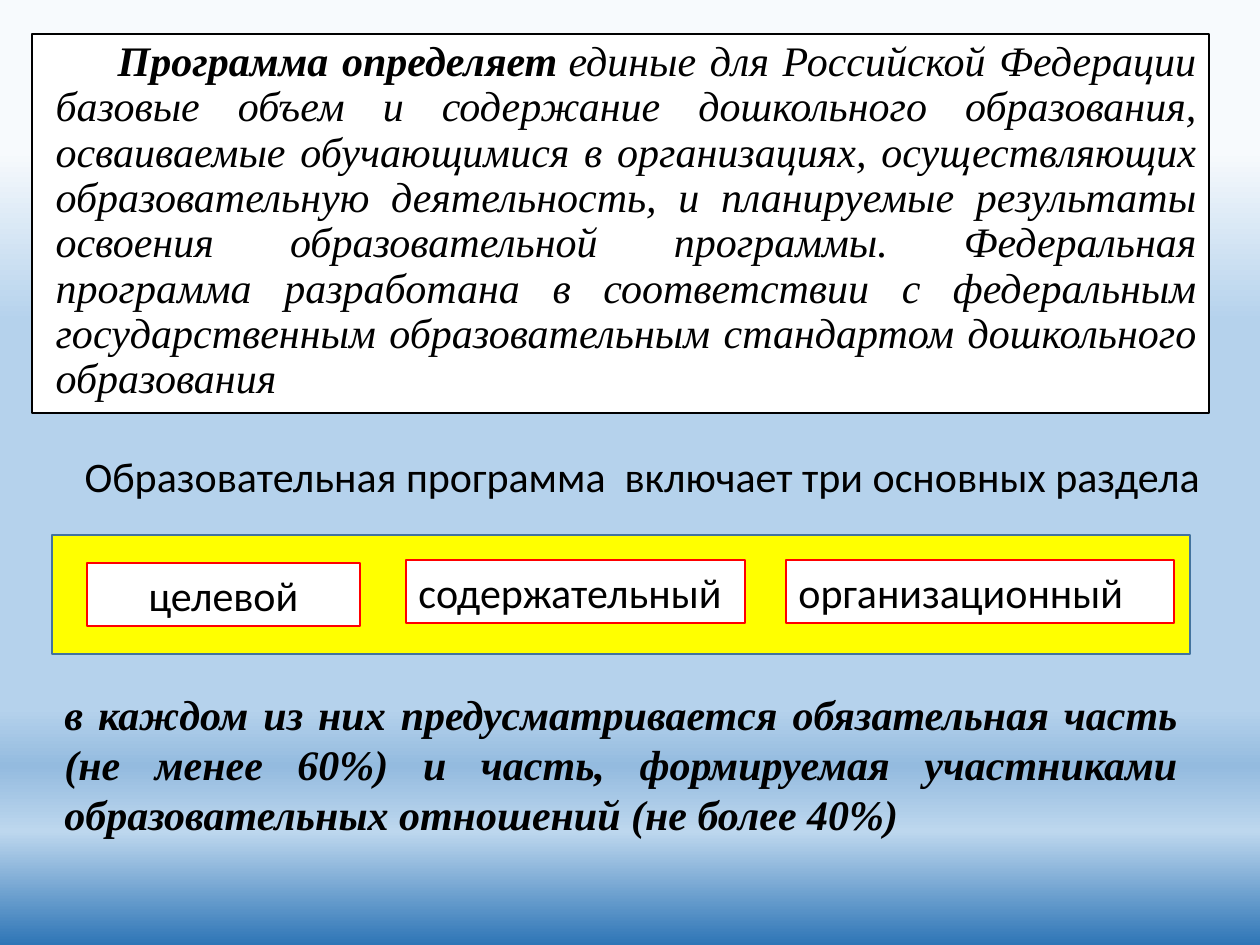
from lxml import etree
from pptx import Presentation
from pptx.dml.color import RGBColor
from pptx.enum.shapes import MSO_SHAPE
from pptx.enum.text import MSO_ANCHOR, MSO_AUTO_SIZE, PP_ALIGN
from pptx.oxml.ns import qn
from pptx.util import Pt

PX = 914400 / 126  # EMU per px
RECT = MSO_SHAPE.RECTANGLE
TOP, MIDDLE = MSO_ANCHOR.TOP, MSO_ANCHOR.MIDDLE
LEFT, CENTER, JUSTIFY = PP_ALIGN.LEFT, PP_ALIGN.CENTER, PP_ALIGN.JUSTIFY
NO_AUTOFIT = MSO_AUTO_SIZE.NONE
SANS, SERIF = "Calibri", "Times New Roman"
COLORS = {"text": "000000", "paper": "FFFFFF", "band": "FFFF00",
          "band_line": "43739E", "section_line": "FF0000"}
SKY_STOPS = [(16, "F7FAFD"), (34, "B5D2EC"), (75, "B5D2EC"),
             (81, "94BBDF"), (88, "BDD7EE"), (100, "2E75B6")]

SUBJECT = "Программа определяет"
DEFINITION = (
    "единые для Российской Федерации базовые объем и содержание дошкольного "
    "образования, осваиваемые обучающимися в организациях, осуществляющих "
    "образовательную деятельность, и планируемые результаты освоения "
    "образовательной программы. Федеральная программа разработана в "
    "соответствии с федеральным государственным образовательным стандартом "
    "дошкольного образования")
HEADING = "Образовательная программа  включает три основных раздела"
SHARES = (
    "в каждом из них предусматривается обязательная часть (не менее 60%) и "
    "часть, формируемая участниками образовательных отношений (не более 40%)")
SECTIONS = [("целевой", (87, 563, 273, 63), CENTER),
            ("содержательный", (406, 560, 339, 63), LEFT),
            ("организационный", (786, 560, 388, 63), LEFT)]


def px(*lengths):
    return [round(length * PX) for length in lengths]


def color(name):
    return RGBColor.from_string(COLORS[name])


def place(shape, box):
    shape.left, shape.top, shape.width, shape.height = px(*box)


def paint(shape, fill, line):
    shape.fill.solid()
    shape.fill.fore_color.rgb = color(fill)
    shape.line.color.rgb = color(line)
    shape.line.width = Pt(1)


def add_run(paragraph, text, size=24, font=SANS, bold=False, italic=False):
    run = paragraph.add_run()
    run.text = text
    run.font.size, run.font.name = Pt(size), font
    run.font.bold, run.font.italic = bold, italic
    run.font.color.rgb = color("text")


def start_text(shape, align=LEFT, anchor=TOP):
    frame = shape.text_frame
    frame.word_wrap = True
    frame.auto_size = NO_AUTOFIT
    frame.vertical_anchor = anchor
    paragraph = frame.paragraphs[0]
    paragraph.alignment = align
    return paragraph


def add_rect(slide, box, fill, line):
    rect = slide.shapes.add_shape(RECT, *px(*box))
    rect.shadow.inherit = False
    paint(rect, fill, line)
    return rect


def set_background(slide):
    fill = slide.background.fill
    fill.gradient()
    fill.gradient_angle = 270  # counter-clockwise, so top to bottom
    # The public interface offers two stops only
    stops = slide.element.find(".//" + qn("a:gsLst"))
    for stop in list(stops):
        stops.remove(stop)
    for percent, value in SKY_STOPS:
        stop = etree.SubElement(stops, qn("a:gs"), pos=str(percent * 1000))
        etree.SubElement(stop, qn("a:srgbClr"), val=value)


def fill_definition(body):
    place(body, (32, 34, 1177, 379))
    paint(body, "paper", "text")
    paragraph = start_text(body, JUSTIFY)
    paragraph.line_spacing = 0.9
    paragraph.space_before = Pt(0)
    # First-line indent without a bullet
    properties = paragraph._p.get_or_add_pPr()
    margin, indent = px(11, 62)
    properties.set("marL", str(margin))
    properties.set("indent", str(indent))
    etree.SubElement(properties, qn("a:buNone"))
    add_run(paragraph, SUBJECT, font=SERIF, bold=True, italic=True)
    add_run(paragraph, " ", size=18, font=SERIF)
    add_run(paragraph, DEFINITION, font=SERIF, italic=True)


def main():
    prs = Presentation()
    prs.slide_width, prs.slide_height = px(1260, 945)
    slide = prs.slides.add_slide(prs.slide_layouts[1])
    set_background(slide)

    # Definition of the programme
    fill_definition(slide.placeholders[1])

    # Heading
    title = slide.shapes.title
    place(title, (72, 444, 1152, 63))
    add_run(start_text(title, anchor=MIDDLE), HEADING)

    # Three sections on a yellow band
    add_rect(slide, (52, 535, 1138, 119), "band", "band_line")
    for name, box, align in SECTIONS:
        section = add_rect(slide, box, "paper", "section_line")
        add_run(start_text(section, align, MIDDLE), name)

    # Shares of the two parts
    shares = slide.shapes.add_textbox(*px(52, 682, 1138, 165))
    add_run(start_text(shares, JUSTIFY), SHARES, font=SERIF, bold=True, italic=True)

    prs.save("out.pptx")


if __name__ == "__main__":
    main()
